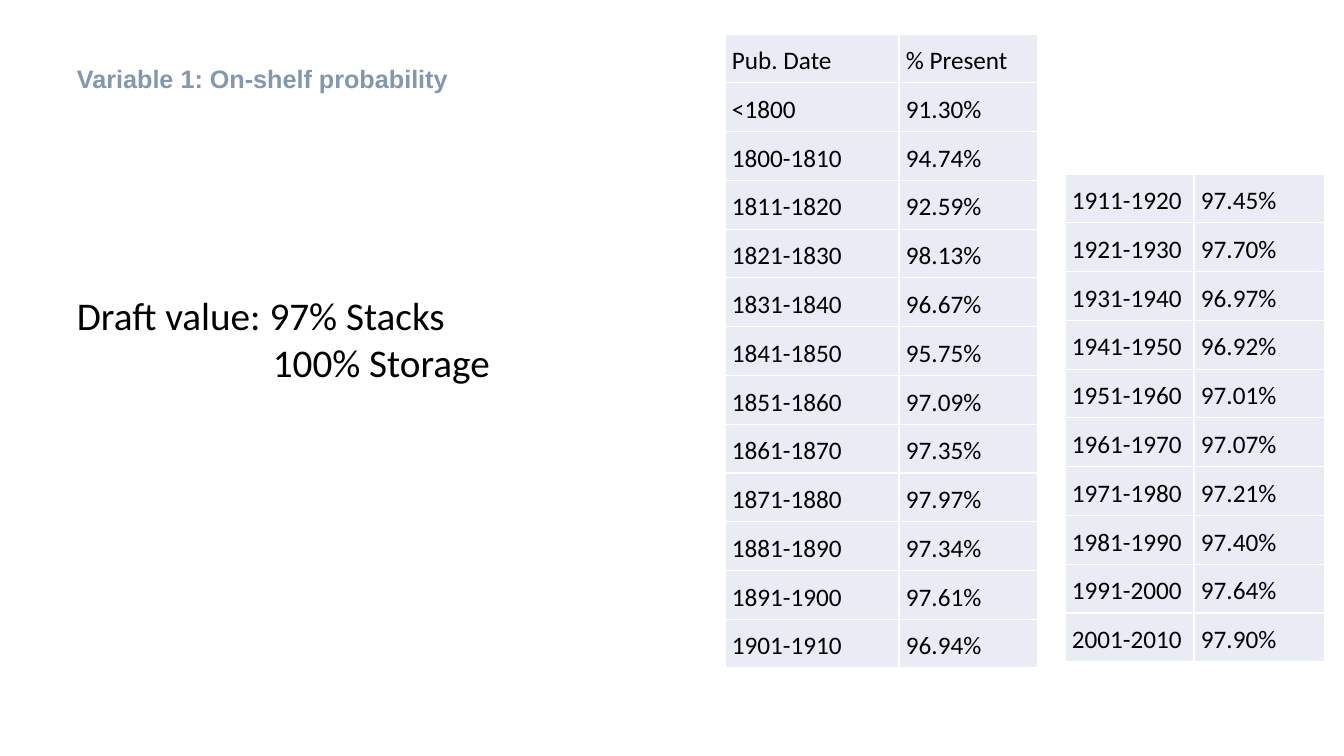
from dataclasses import dataclass

from lxml import etree
from pptx import Presentation
from pptx import util as u
from pptx.dml.color import RGBColor
from pptx.oxml import ns

EMU_PER_PX = 914400 / 100.8


@dataclass(frozen=True)
class Theme:
    heading: str = "8497B0"
    ink: str = "000000"
    cell: str = "E9EBF5"
    border: str = "FFFFFF"
    heading_font: str = "Arial"
    body_font: str = "Calibri"
    small: int = 18
    large: int = 28


THEME = Theme()

EARLY_DATES = [
    ("Pub. Date", "% Present"),
    ("<1800", "91.30%"),
    ("1800-1810", "94.74%"),
    ("1811-1820", "92.59%"),
    ("1821-1830", "98.13%"),
    ("1831-1840", "96.67%"),
    ("1841-1850", "95.75%"),
    ("1851-1860", "97.09%"),
    ("1861-1870", "97.35%"),
    ("1871-1880", "97.97%"),
    ("1881-1890", "97.34%"),
    ("1891-1900", "97.61%"),
    ("1901-1910", "96.94%"),
]
LATE_DATES = [
    ("1911-1920", "97.45%"),
    ("1921-1930", "97.70%"),
    ("1931-1940", "96.97%"),
    ("1941-1950", "96.92%"),
    ("1951-1960", "97.01%"),
    ("1961-1970", "97.07%"),
    ("1971-1980", "97.21%"),
    ("1981-1990", "97.40%"),
    ("1991-2000", "97.64%"),
    ("2001-2010", "97.90%"),
]


def px(length):
    return u.Emu(round(length * EMU_PER_PX))


def style_font(paragraph, size, color=THEME.ink, **formats):
    formats = {"name": THEME.body_font, "size": u.Pt(size), **formats}
    for run in paragraph.runs:
        for key, value in formats.items():
            setattr(run.font, key, value)
        run.font.color.rgb = RGBColor.from_string(color)


def add_lines(slide, box, lines, size, **formats):
    """Add a text box; each line is a pair of text and left indent in px."""
    frame = slide.shapes.add_textbox(*map(px, box)).text_frame
    frame.word_wrap = True
    for index, (line, indent) in enumerate(lines):
        paragraph = frame.add_paragraph() if index else frame.paragraphs[0]
        paragraph.text = line
        if indent:
            paragraph._p.get_or_add_pPr().set("marL", str(px(indent)))
        style_font(paragraph, size, **formats)


def add_borders(cell):
    properties = cell._tc.get_or_add_tcPr()
    for index, side in enumerate(("lnL", "lnR", "lnT", "lnB")):
        edge = etree.Element(ns.qn(f"a:{side}"), w=str(u.Pt(1)))
        fill = etree.SubElement(edge, ns.qn("a:solidFill"))
        etree.SubElement(fill, ns.qn("a:srgbClr"), val=THEME.border)
        properties.insert(index, edge)


def fill_cell(cell, words):
    for side in ("left", "right", "top", "bottom"):
        setattr(cell, f"margin_{side}", px(7))
    cell.fill.solid()
    cell.fill.fore_color.rgb = RGBColor.from_string(THEME.cell)
    add_borders(cell)
    paragraph = cell.text_frame.paragraphs[0]
    paragraph.text = words
    paragraph.line_spacing = 1.15
    style_font(paragraph, THEME.small)


def add_date_table(slide, left, top, widths, records, row_height=48):
    table = slide.shapes.add_table(
        len(records), len(widths), px(left), px(top),
        px(sum(widths)), px(row_height * len(records))).table
    table.first_row = table.horz_banding = False
    for column, width in zip(table.columns, widths):
        column.width = px(width)
    for row, record in zip(table.rows, records):
        row.height = px(row_height)
        for cell, words in zip(row.cells, record):
            fill_cell(cell, words)


def main():
    deck = Presentation()
    deck.slide_width, deck.slide_height = px(1344), px(756)
    slide = deck.slides.add_slide(deck.slide_layouts[6])
    add_lines(slide, (67, 58, 572, 179),
              [("Variable 1: On-shelf probability", 0)],
              THEME.small, color=THEME.heading,
              name=THEME.heading_font, bold=True)
    add_date_table(slide, 725, 34, (174, 139), EARLY_DATES)
    add_date_table(slide, 1065, 174, (129, 131), LATE_DATES)
    add_lines(slide, (67, 286, 450, 105),
              [("Draft value: 97% Stacks", 0), ("100% Storage", 196)],
              THEME.large)
    deck.save("out.pptx")


if __name__ == "__main__":
    main()
